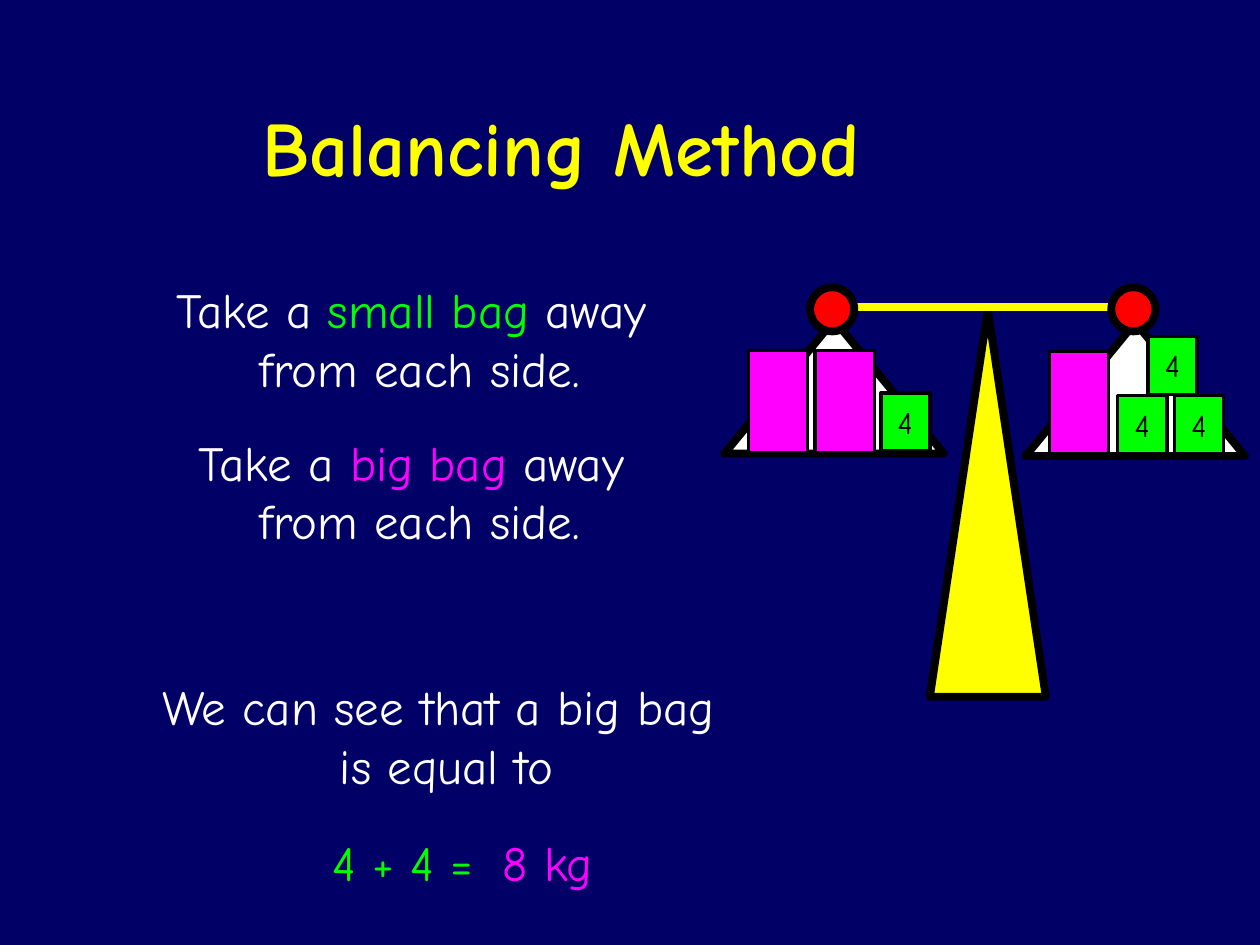
import pptx
import pptx.dml.color
import pptx.enum.shapes
import pptx.enum.text
import pptx.oxml.ns
import pptx.util
from lxml import etree

Inches = pptx.util.Inches
Pt = pptx.util.Pt
RGBColor = pptx.dml.color.RGBColor
Shape = pptx.enum.shapes.MSO_SHAPE
Align = pptx.enum.text.PP_ALIGN
Anchor = pptx.enum.text.MSO_ANCHOR

NAVY = RGBColor(0x00, 0x00, 0x66)
YELLOW = RGBColor(0xFF, 0xFF, 0x00)
WHITE = RGBColor(0xFF, 0xFF, 0xFF)
BLACK = RGBColor(0x00, 0x00, 0x00)
RED = RGBColor(0xFF, 0x00, 0x00)
MAGENTA = RGBColor(0xFF, 0x00, 0xFF)
GREEN = RGBColor(0x00, 0xFF, 0x00)


class BalanceSlide:
    font_name = "Comic Neue"
    heavy = 4.5
    thin = 2

    def __init__(self, deck):
        self.slide = deck.slides.add_slide(deck.slide_layouts[6])
        background = self.slide.background.fill
        background.solid()
        background.fore_color.rgb = NAVY

    def style(self, font, size, color=None, bold=False):
        font.name = self.font_name
        font.size = Pt(size)
        font.bold = bold
        if color is not None:
            font.color.rgb = color

    def text(self, box, lines, size=28, align=Align.CENTER,
             anchor=Anchor.TOP, bold=False, wrap=False):
        frame = self.slide.shapes.add_textbox(*map(Inches, box)).text_frame
        frame.word_wrap = wrap
        frame.vertical_anchor = anchor
        for number, line in enumerate(lines):
            paragraph = frame.add_paragraph() if number else frame.paragraphs[0]
            paragraph.alignment = align
            colors = {color for _, color in line}
            shared = colors.pop() if len(colors) == 1 else None
            self.style(paragraph.font, size, shared, bold)
            for words, color in line:
                run = paragraph.add_run()
                run.text = words
                if shared is None:
                    run.font.color.rgb = color

    def solid(self, kind, box, color, weight):
        shape = self.slide.shapes.add_shape(kind, *map(Inches, box))
        shape.shadow.inherit = False
        shape.fill.solid()
        shape.fill.fore_color.rgb = color
        shape.line.color.rgb = BLACK
        shape.line.width = Pt(weight)
        return shape

    def triangle(self, box, color):
        self.solid(Shape.ISOSCELES_TRIANGLE, box, color, self.heavy)

    def pivot(self, left):
        self.solid(Shape.OVAL, (left, 2.28, 0.35, 0.35), RED, self.heavy)

    def big_bag(self, left, top):
        self.solid(Shape.RECTANGLE, (left, top, 0.47, 0.81), MAGENTA, self.thin)

    def small_bag(self, left, top):
        bag = self.solid(Shape.RECTANGLE, (left, top, 0.39, 0.46), GREEN, self.thin)
        frame = bag.text_frame
        frame.word_wrap = False
        frame.vertical_anchor = Anchor.MIDDLE
        label = frame.paragraphs[0]
        label.text = "4"
        label.alignment = Align.CENTER
        self.style(label.font, 18, BLACK)

    def beam(self, left, right, height):
        line = self.slide.shapes.add_connector(
            pptx.enum.shapes.MSO_CONNECTOR.STRAIGHT,
            Inches(left), Inches(height), Inches(right), Inches(height))
        line.line.color.rgb = YELLOW
        line.line.width = Pt(self.heavy)
        etree.SubElement(line.element.spPr, pptx.oxml.ns.qn("a:effectLst"))


def main():
    deck = pptx.Presentation()
    deck.slide_width = Inches(10)
    deck.slide_height = Inches(7.5)
    page = BalanceSlide(deck)

    page.text((1.04, 0.81, 6.83, 0.76), [[("Balancing Method", YELLOW)]],
              size=44, anchor=Anchor.BOTTOM, bold=True, wrap=True)

    for left, top in ((8.14, 2.56), (5.75, 2.54)):
        page.triangle((left, top, 1.74, 1.06), WHITE)
    page.triangle((7.38, 2.46, 0.92, 3.07), YELLOW)
    page.beam(6.78, 9.01, 2.44)
    for left in (6.43, 8.82):
        page.pivot(left)

    for left, top in ((5.94, 2.78), (6.47, 2.78), (8.33, 2.79)):
        page.big_bag(left, top)
    for left, top in ((6.99, 3.12), (9.32, 3.14), (8.87, 3.14), (9.11, 2.67)):
        page.small_bag(left, top)

    each_side = [("from each side.", WHITE)]
    page.text((1.17, 2.17, 4.32, 1.04),
              [[("Take a ", WHITE), ("small bag", GREEN), (" away ", WHITE)], each_side])
    page.text((1.35, 3.38, 3.96, 1.04),
              [[("Take a ", WHITE), ("big bag ", MAGENTA), ("away ", WHITE)], each_side])
    page.text((1.01, 5.32, 5.07, 1.04),
              [[("We can see that a big bag ", WHITE)], [("is equal to", WHITE)]])
    page.text((2.54, 6.56, 1.42, 0.57), [[("4 + 4 =", GREEN)]], align=Align.LEFT)
    page.text((3.89, 6.56, 0.98, 0.57), [[("8 kg", MAGENTA)]], align=Align.LEFT)

    deck.save("out.pptx")


if __name__ == "__main__":
    main()
